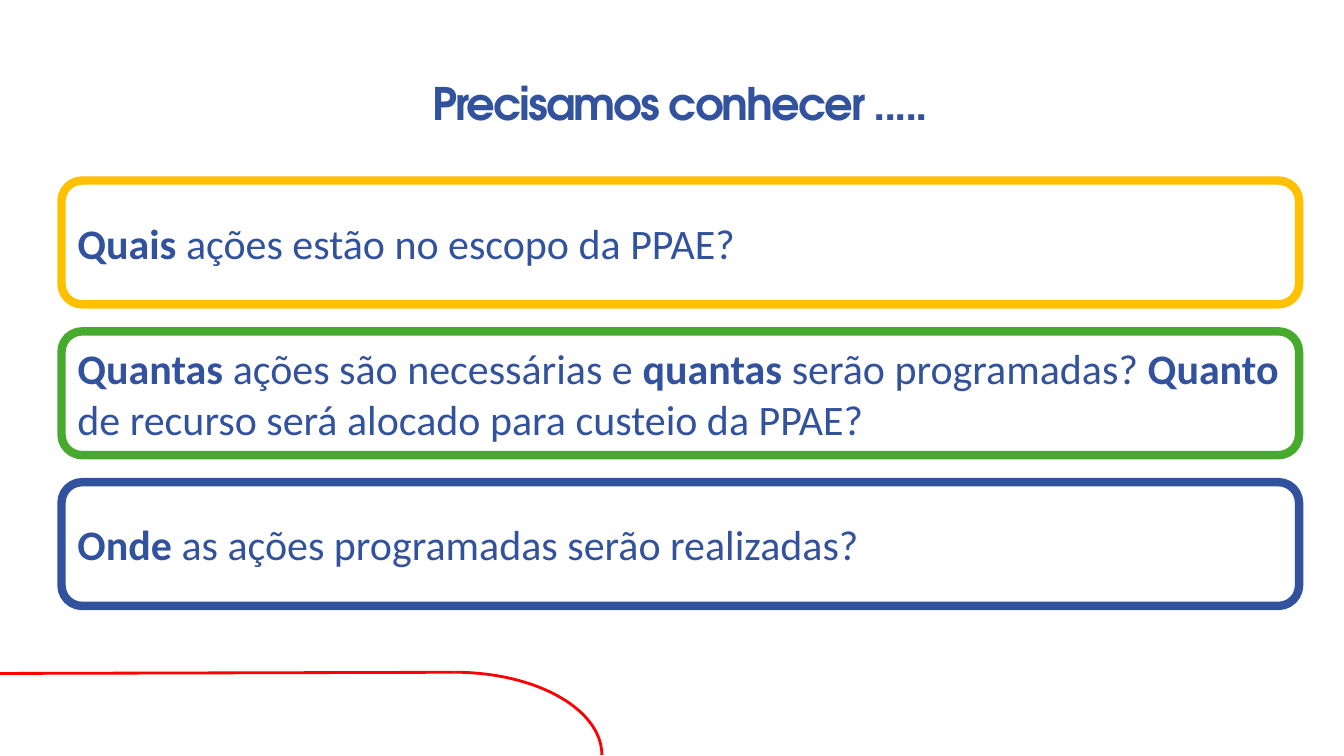
"""Build the slide listing what must be known about the PPAE."""
from dataclasses import dataclass

from lxml.etree import SubElement
from pptx import Presentation
from pptx.dml.color import RGBColor as RGB
from pptx.enum.shapes import MSO_CONNECTOR as Link, MSO_SHAPE as Form
from pptx.enum.text import MSO_ANCHOR as Anchor, MSO_AUTO_SIZE as Fit, PP_ALIGN as Align
from pptx.oxml.ns import qn
from pptx.util import Cm, Pt


@dataclass(frozen=True)
class Theme:
    white: RGB = RGB(0xFF, 0xFF, 0xFF)
    blue: RGB = RGB(0x33, 0x52, 0x9E)
    gold: RGB = RGB(0xFF, 0xC0, 0x00)
    green: RGB = RGB(0x47, 0xAA, 0x2D)
    red: RGB = RGB(0xFF, 0x00, 0x00)
    head: str = "TeX Gyre Adventor"
    body: str = "Calibri"
    large: Pt = Pt(32)
    text: Pt = Pt(30)
    thick: Pt = Pt(6)
    thin: Pt = Pt(2)


theme = Theme()


def style(run, face, size, bold):
    run.font.name, run.font.size, run.font.bold = face, size, bold
    run.font.color.rgb = theme.blue


def stroke(shape, color, width):
    shape.line.color.rgb = color
    shape.line.width = width


deck = Presentation()
deck.slide_width, deck.slide_height = Cm(33.87), Cm(19.05)
slide = deck.slides.add_slide(deck.slide_layouts[5])
shapes = slide.shapes
left, width = Cm(1.55), Cm(31.19)

edge = shapes.add_connector(Link.STRAIGHT, 0, Cm(16.97), Cm(11.46), Cm(16.94))
stroke(edge, theme.red, theme.thin)
SubElement(edge._element.spPr, qn("a:effectLst"))

curve = shapes.add_shape(Form.ARC, Cm(7.75), Cm(16.94), Cm(7.42), Cm(4.17))
curve.shadow.inherit = False
curve.fill.background()
stroke(curve, theme.red, theme.thin)

cards = [
    (theme.gold, [("Quais", True), (" ações estão no escopo da PPAE?", False)]),
    (theme.green, [
        ("Quantas", True), (" ações são necessárias e ", False),
        ("quantas", True), (" serão programadas? ", False),
        ("Quanto", True), (" de recurso será alocado para custeio da PPAE?", False),
    ]),
    (theme.blue, [("Onde", True), (" as ações programadas serão realizadas?", False)]),
]
for row, (color, parts) in enumerate(cards):
    card = shapes.add_shape(
        Form.ROUNDED_RECTANGLE, left, Cm(4.55 + 3.8 * row), width, Cm(3.12))
    card.shadow.inherit = False
    card.fill.solid()
    card.fill.fore_color.rgb = theme.white
    stroke(card, color, theme.thick)
    frame = card.text_frame
    frame.word_wrap = True
    frame.vertical_anchor = Anchor.MIDDLE
    para = frame.paragraphs[0]
    para.alignment = Align.LEFT
    for words, bold in parts:
        run = para.add_run()
        run.text = words
        style(run, theme.body, theme.text, bold)

title = shapes.title
title.left, title.top, title.width, title.height = left, Cm(1.93), width, Cm(2.34)
frame = title.text_frame
frame.text = "Precisamos conhecer ....."
frame.word_wrap = True
frame.auto_size = Fit.NONE
frame.vertical_anchor = Anchor.TOP
para = frame.paragraphs[0]
para.alignment = Align.CENTER
para.line_spacing = 0.9
run = para.runs[0]
style(run, theme.head, theme.large, True)
run._r.get_or_add_rPr().set("spc", "-150")

deck.save("out.pptx")
